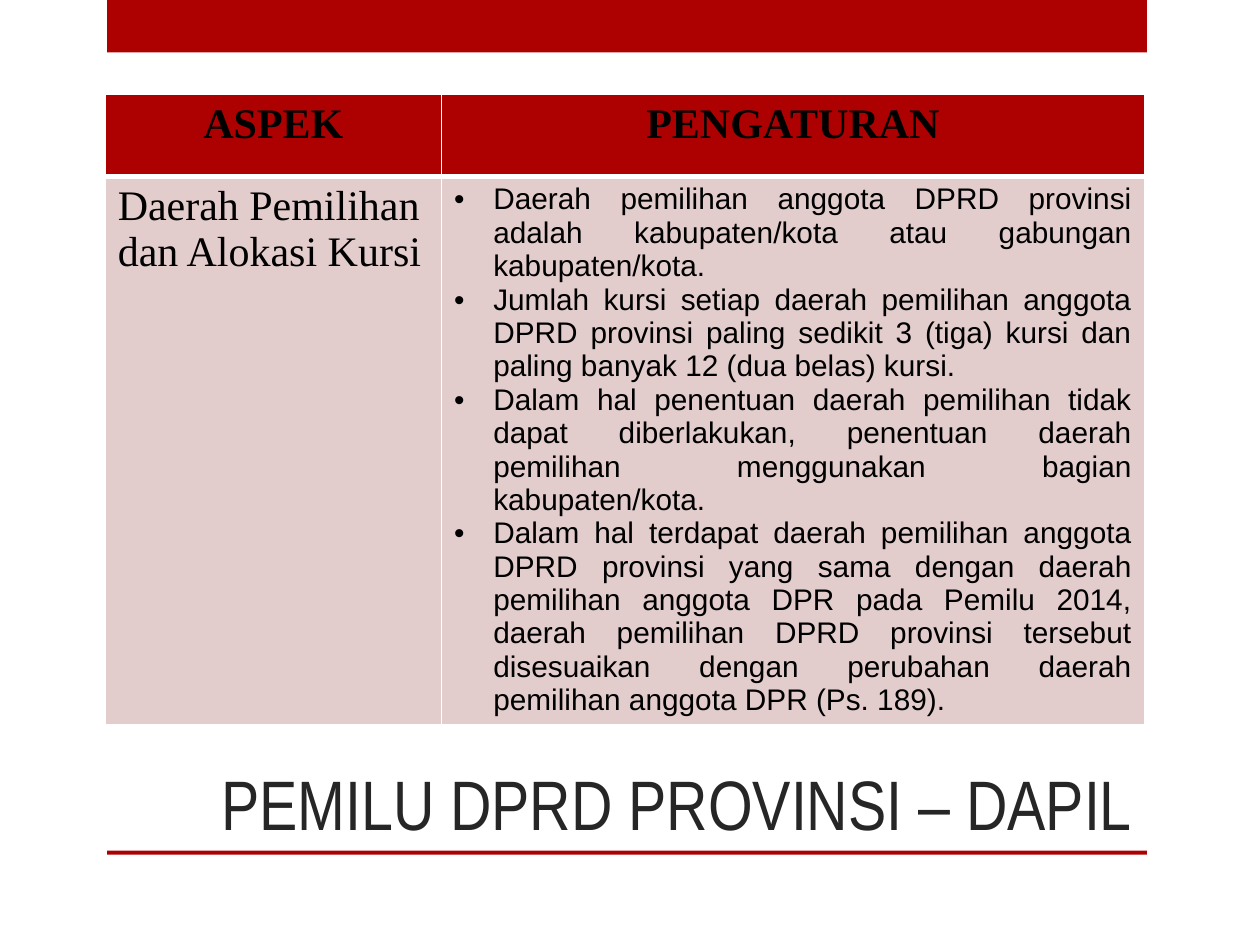
from dataclasses import dataclass

from lxml.etree import SubElement
from pptx import Presentation
from pptx.dml.color import RGBColor
from pptx.enum.shapes import MSO_SHAPE
from pptx.enum.text import MSO_ANCHOR, MSO_AUTO_SIZE, PP_ALIGN
from pptx.oxml.ns import qn
from pptx.util import Cm, Pt

TITLE = "PEMILU DPRD PROVINSI – DAPIL"
HEADERS = ["ASPEK", "PENGATURAN"]
ASPECT = "Daerah Pemilihan dan Alokasi Kursi"
RULES = [
    "Daerah pemilihan anggota DPRD provinsi adalah kabupaten/kota atau gabungan kabupaten/kota.",
    "Jumlah kursi setiap daerah pemilihan anggota DPRD provinsi paling sedikit 3 (tiga) kursi "
    "dan paling banyak 12 (dua belas) kursi.",
    "Dalam hal penentuan daerah pemilihan tidak dapat diberlakukan, penentuan daerah pemilihan "
    "menggunakan bagian kabupaten/kota.",
    "Dalam hal terdapat daerah pemilihan anggota DPRD provinsi yang sama dengan daerah pemilihan "
    "anggota DPR pada Pemilu 2014, daerah pemilihan DPRD provinsi tersebut disesuaikan dengan "
    "perubahan daerah pemilihan anggota DPR (Ps. 189).",
]


@dataclass(frozen=True)
class Theme:
    """Colours and text formats of the slide."""

    accent = RGBColor.from_string("AD0101")
    tint = RGBColor.from_string("E3CCCC")
    ink = RGBColor.from_string("262626")
    black = RGBColor.from_string("000000")
    border = "FFFFFF"
    title = {"name": "Arial Narrow", "size": Pt(40), "bold": False}
    header = {"name": "Times New Roman", "size": Pt(24), "bold": True}
    aspect = {"name": "Times New Roman", "size": Pt(24), "bold": False}
    rule = {"name": "Arial", "size": Pt(17), "bold": False}


class SlideBuilder:
    """Hold the theme and the current slide, and add elements to it."""

    def __init__(self, slide, theme):
        """Keep the slide and its theme."""
        self.slide = slide
        self.theme = theme

    def place(self, shape, left, top, width, height):
        """Move and size a shape, in centimetres."""
        box = {"left": left, "top": top, "width": width, "height": height}
        for name, value in box.items():
            setattr(shape, name, Cm(value))

    def add_text(self, frame, texts, style, color, alignment, bulleted=False):
        """Add one formatted paragraph for each text."""
        for index, text in enumerate(texts):
            paragraph = frame.add_paragraph() if index else frame.paragraphs[0]
            paragraph.alignment = alignment
            run = paragraph.add_run()
            run.text = text
            for name, value in style.items():
                setattr(run.font, name, value)
            run.font.color.rgb = color
            if bulleted:
                self.bullet(paragraph)

    def bullet(self, paragraph):
        """Give a paragraph a hanging round bullet."""
        properties = paragraph._p.get_or_add_pPr()
        indent = Cm(0.79)
        properties.set("marL", str(indent))
        properties.set("indent", str(-indent))
        SubElement(properties, qn("a:buFont"), typeface="Arial")
        SubElement(properties, qn("a:buChar"), char="•")

    def title(self, text, *box):
        """Fill the title placeholder, right-aligned at its foot."""
        shape = self.slide.shapes.title
        self.place(shape, *box)
        frame = shape.text_frame
        settings = {
            "vertical_anchor": MSO_ANCHOR.BOTTOM,
            "auto_size": MSO_AUTO_SIZE.NONE,
            "word_wrap": True,
        }
        for name, value in settings.items():
            setattr(frame, name, value)
        self.add_text(frame, [text], self.theme.title, self.theme.ink, PP_ALIGN.RIGHT)

    def bar(self, *box):
        """Add a plain accent bar."""
        shape = self.slide.shapes.add_shape(MSO_SHAPE.RECTANGLE, *map(Cm, box))
        shape.shadow.inherit = False
        shape.fill.solid()
        shape.fill.fore_color.rgb = self.theme.accent
        shape.line.fill.background()

    def table(self, left, top, widths, heights):
        """Add an empty table with the given column widths and row heights."""
        box = map(Cm, (left, top, sum(widths), sum(heights)))
        table = self.slide.shapes.add_table(len(heights), len(widths), *box).table
        for column, width in zip(table.columns, widths):
            column.width = Cm(width)
        for row, height in zip(table.rows, heights):
            row.height = Cm(height)
        return table

    def cell(self, cell, texts, style, fill, alignment, top=1, bottom=1, bulleted=False):
        """Border, fill and label one table cell."""
        properties = cell._tc.get_or_add_tcPr()
        for side, points in {"L": 1, "R": 1, "T": top, "B": bottom}.items():
            line = SubElement(properties, qn(f"a:ln{side}"), w=str(Pt(points)))
            solid = SubElement(line, qn("a:solidFill"))
            SubElement(solid, qn("a:srgbClr"), val=self.theme.border)
        cell.fill.solid()
        cell.fill.fore_color.rgb = fill
        self.add_text(cell.text_frame, texts, style, self.theme.black, alignment, bulleted)


def main():
    """Build and save the slide."""
    presentation = Presentation()
    presentation.slide_width, presentation.slide_height = Cm(25.4), Cm(19.05)
    slide = presentation.slides.add_slide(presentation.slide_layouts[5])
    theme = Theme()
    builder = SlideBuilder(slide, theme)

    builder.bar(2.16, 0, 20.96, 1.06)
    builder.bar(2.16, 17.15, 20.96, 0.08)
    builder.title(TITLE, 2.12, 12.7, 20.96, 4.45)

    table = builder.table(2.12, 1.91, [6.78, 14.17], [1.65, 11.05])
    for column, text in enumerate(HEADERS):
        builder.cell(table.cell(0, column), [text], theme.header, theme.accent,
                     PP_ALIGN.CENTER, bottom=3)
    builder.cell(table.cell(1, 0), [ASPECT], theme.aspect, theme.tint, PP_ALIGN.LEFT, top=3)
    builder.cell(table.cell(1, 1), RULES, theme.rule, theme.tint, PP_ALIGN.JUSTIFY,
                 top=3, bulleted=True)
    presentation.save("out.pptx")


if __name__ == "__main__":
    main()
